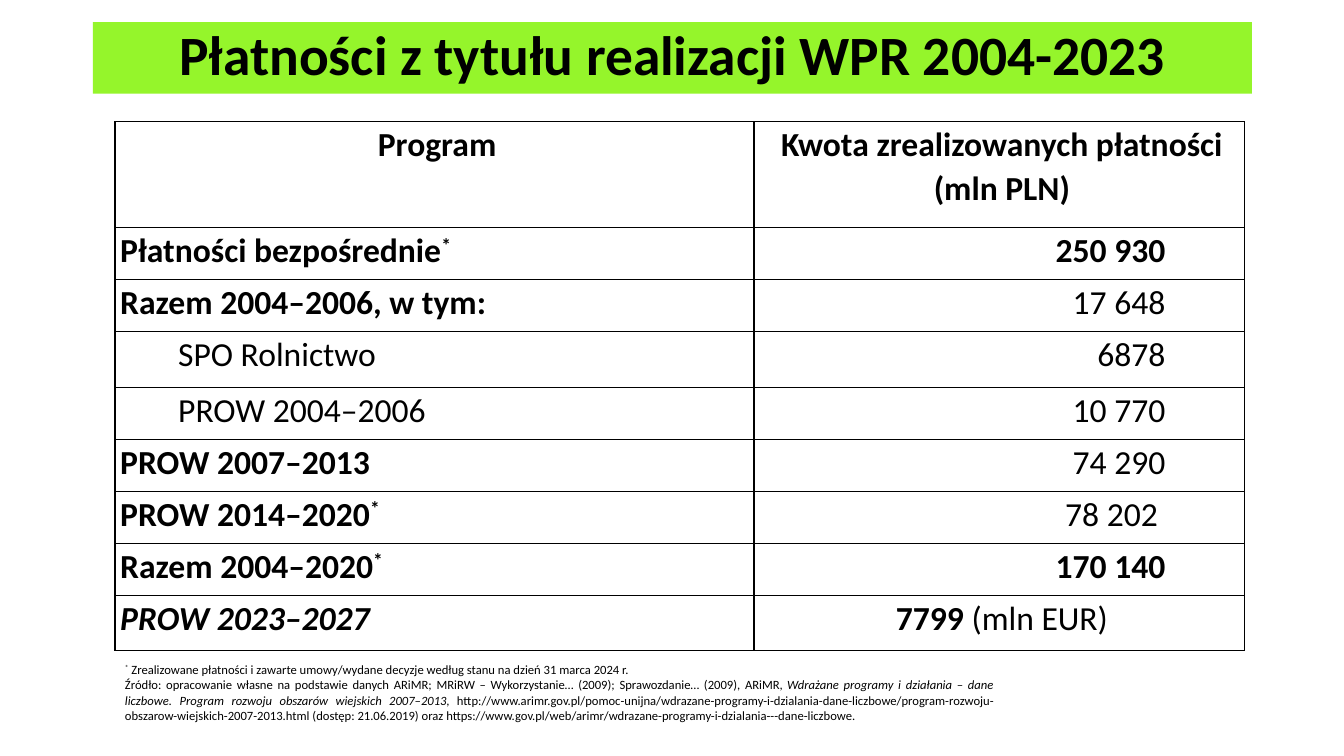
"""Build a slide with a table of payments made under the CAP in 2004-2023."""
from lxml import etree
from pptx import Presentation
from pptx import util as u
from pptx.dml.color import RGBColor
from pptx.enum import shapes, text
from pptx.oxml import ns

BLACK = RGBColor(0, 0, 0)
GREEN = RGBColor(0x95, 0xF5, 0x2B)
FONT = "Calibri"
LEFT, RIGHT = text.PP_ALIGN.LEFT, text.PP_ALIGN.RIGHT
MID, JUST = text.PP_ALIGN.CENTER, text.PP_ALIGN.JUSTIFY

TITLE = [("Płatności z tytułu realizacji WPR 2004-2023", "b")]
STAR = ("*", "bs")
HEAD = [[("Program", "b")], [("Kwota zrealizowanych płatności (mln PLN)", "b")]]
ROWS = [
    ([("Płatności bezpośrednie", "b"), STAR], [("250 930", "b")]),
    ([("Razem 2004–2006, w tym:", "b")], [("17 648", "")]),
    ([("SPO Rolnictwo", "")], [("6878", "")]),
    ([("PROW 2004–2006", "")], [("10 770", "")]),
    ([("PROW 2007–2013", "b")], [("74 290", "")]),
    ([("PROW 2014–2020", "b"), STAR], [("78 202 ", "")]),
    ([("Razem 2004–2020", "b"), STAR], [("170 140", "b")]),
    ([("PROW 2023–2027", "bi")], [("7799", "b"), (" (mln EUR)", "")]),
]
SUBS = (3, 4)
NOTES = [
    [("*", "s"), (" Zrealizowane płatności i zawarte umowy/wydane decyzje według "
                  "stanu na dzień 31 marca 2024 r.", "")],
    [("Źródło: opracowanie własne na podstawie danych ARiMR; MRiRW – Wykorzystanie… "
      "(2009); Sprawozdanie… (2009), ARiMR, ", ""),
     ("Wdrażane programy i działania – dane liczbowe. Program rozwoju obszarów "
      "wiejskich 2007–2013", "i"),
     (", http://www.arimr.gov.pl/pomoc-unijna/wdrazane-programy-i-dzialania-dane-liczbowe/"
      "program-rozwoju-obszarow-wiejskich-2007-2013.html (dostęp: 21.06.2019) oraz "
      "https://www.gov.pl/web/arimr/wdrazane-programy-i-dzialania---dane-liczbowe.", "")],
]
WIDTHS = (16.1, 12.37)
HIGHS = (2.67, 1.31, 1.31, 1.4, 1.31, 1.31, 1.31, 1.31, 1.4)
EDGE = 2.9


def write(par, runs, size, align, space=1.0):
    """Fill a paragraph with runs marked b, i or s (superscript)."""
    par.alignment, par.line_spacing = align, space
    par.font.name, par.font.size = FONT, u.Pt(size)
    par.font.color.rgb = BLACK
    for words, marks in runs:
        run = par.add_run()
        run.text = words
        run.font.bold, run.font.italic = "b" in marks, "i" in marks
        if "s" in marks:
            run.font._element.set("baseline", "30000")


def frame(cell):
    """Draw thin black borders and leave the cell without fill."""
    props = cell._tc.get_or_add_tcPr()
    for side in ("lnL", "lnR", "lnT", "lnB"):
        line = etree.SubElement(props, ns.qn("a:" + side), w=str(u.Pt(1)))
        fill = etree.SubElement(line, ns.qn("a:solidFill"))
        etree.SubElement(fill, ns.qn("a:srgbClr"), val=str(BLACK))
    cell.fill.background()


def main():
    """Lay out the title, the table and the notes."""
    deck = Presentation()
    deck.slide_width, deck.slide_height = u.Cm(33.87), u.Cm(19.05)
    slide = deck.slides.add_slide(deck.slide_layouts[6])

    bar = slide.shapes.add_shape(shapes.MSO_SHAPE.RECTANGLE, u.Cm(2.34), u.Cm(0.56),
                                 u.Cm(29.21), u.Cm(1.8))
    bar.shadow.inherit = False
    bar.fill.solid()
    bar.fill.fore_color.rgb = GREEN
    bar.line.fill.background()
    bar.text_frame.vertical_anchor = text.MSO_ANCHOR.MIDDLE
    write(bar.text_frame.paragraphs[0], TITLE, 39.6, MID, 0.9)

    grid = slide.shapes.add_table(len(HIGHS), len(WIDTHS), u.Cm(EDGE), u.Cm(3.07),
                                  u.Cm(sum(WIDTHS)), u.Cm(sum(HIGHS))).table
    grid.first_row = grid.horz_banding = False
    for col, width in zip(grid.columns, WIDTHS):
        col.width = u.Cm(width)
    last = len(ROWS)
    for r, (high, row) in enumerate(zip(HIGHS, [HEAD, *ROWS])):
        grid.rows[r].height = u.Cm(high)
        for c, runs in enumerate(row):
            cell = grid.cell(r, c)
            mid = r == 0 or (c == 1 and r == last)
            align = MID if mid else RIGHT if c else LEFT if r in SUBS else JUST
            cell.margin_left = u.Cm(0.13)
            cell.margin_right = u.Cm(2 if align == RIGHT else 0)
            cell.margin_top = cell.margin_bottom = 0
            par = cell.text_frame.paragraphs[0]
            write(par, runs, 24, align, 1.07)
            if r in SUBS and c == 0:
                par._p.get_or_add_pPr().set("marL", str(u.Cm(1.46)))
            frame(cell)

    box = slide.shapes.add_textbox(u.Cm(EDGE), u.Cm(16.56), u.Cm(22.38), u.Cm(1.8))
    body = box.text_frame
    body.word_wrap = True
    for n, runs in enumerate(NOTES):
        write(body.add_paragraph() if n else body.paragraphs[0], runs, 9, JUST)

    deck.save("out.pptx")


if __name__ == "__main__":
    main()
